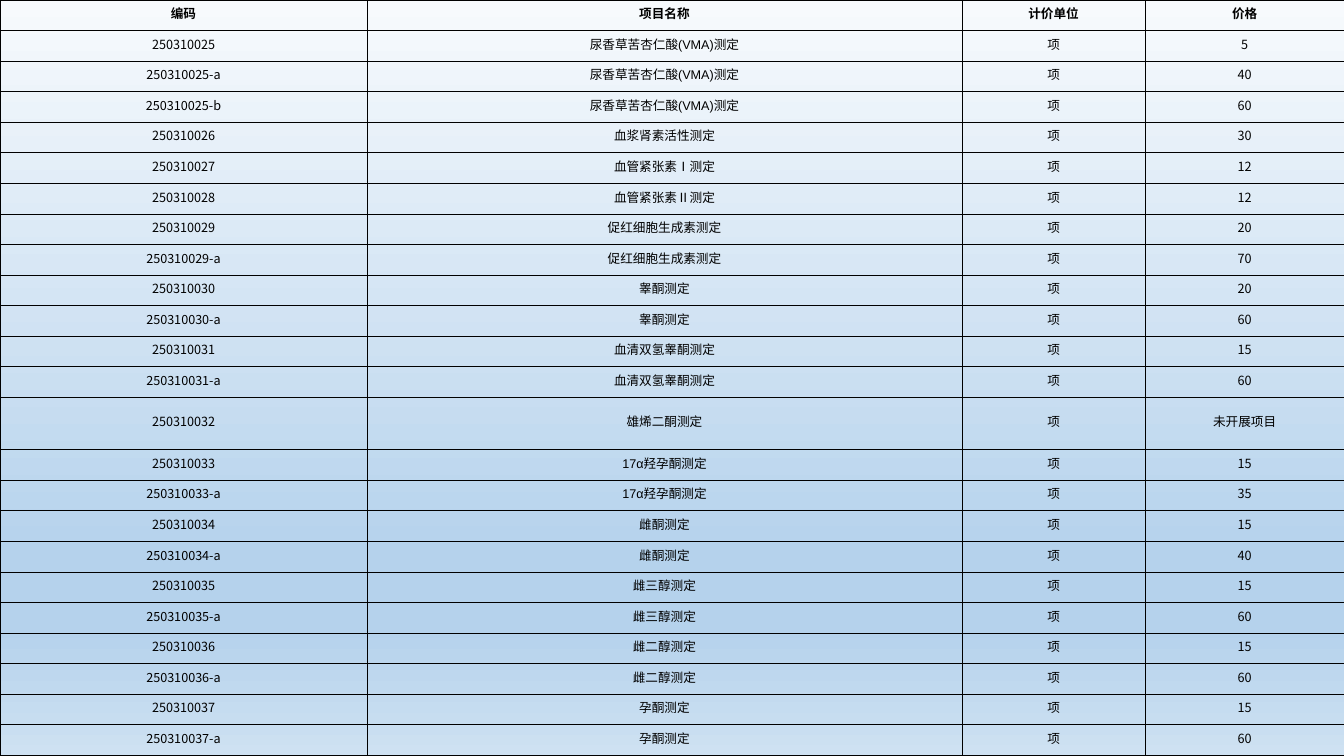
"""Build a price list of hormone tests as one full-slide table."""
from lxml.etree import SubElement
from pptx import Presentation
from pptx.dml.color import RGBColor
from pptx.enum.text import MSO_ANCHOR as Anchor, PP_ALIGN as Align
from pptx.oxml import parse_xml
from pptx.oxml.ns import nsdecls, qn
from pptx.util import Inches, Pt

HEAD = ("编码", "项目名称", "计价单位", "价格")
UNIT = "项"
TESTS = [
    ("250310025", "尿香草苦杏仁酸(VMA)测定", "5"),
    ("250310025-a", "尿香草苦杏仁酸(VMA)测定", "40"),
    ("250310025-b", "尿香草苦杏仁酸(VMA)测定", "60"),
    ("250310026", "血浆肾素活性测定", "30"),
    ("250310027", "血管紧张素Ⅰ测定", "12"),
    ("250310028", "血管紧张素Ⅱ测定", "12"),
    ("250310029", "促红细胞生成素测定", "20"),
    ("250310029-a", "促红细胞生成素测定", "70"),
    ("250310030", "睾酮测定", "20"),
    ("250310030-a", "睾酮测定", "60"),
    ("250310031", "血清双氢睾酮测定", "15"),
    ("250310031-a", "血清双氢睾酮测定", "60"),
    ("250310032", "雄烯二酮测定", "未开展项目"),
    ("250310033", "17α羟孕酮测定", "15"),
    ("250310033-a", "17α羟孕酮测定", "35"),
    ("250310034", "雌酮测定", "15"),
    ("250310034-a", "雌酮测定", "40"),
    ("250310035", "雌三醇测定", "15"),
    ("250310035-a", "雌三醇测定", "60"),
    ("250310036", "雌二醇测定", "15"),
    ("250310036-a", "雌二醇测定", "60"),
    ("250310037", "孕酮测定", "15"),
    ("250310037-a", "孕酮测定", "60"),
]
WIDTHS = (3.64, 5.9, 1.82, 1.97)
WIDE, HIGH, TALL = 13.33, 7.5, 0.52
LATIN, HAN = "Arial", "Noto Sans CJK SC"
BLACK = RGBColor(0x00, 0x00, 0x00)
PALE = RGBColor(0xF7, 0xFA, 0xFD)
BLUE = RGBColor(0xB5, 0xD2, 0xEC)
MIST = RGBColor(0xCE, 0xE1, 0xF2)
STOPS = ((0, PALE), (74, BLUE), (83, BLUE), (100, MIST))


def paint(slide):
    """Fill the background with a downward gradient."""
    slide.background.fill.solid()
    old = slide.element.find(".//" + qn("p:bgPr"))[0]
    stops = "".join(
        f'<a:gs pos="{pos * 1000}"><a:srgbClr val="{tint}"/></a:gs>'
        for pos, tint in STOPS)
    grad = parse_xml(
        f'<a:gradFill {nsdecls("a")} rotWithShape="1"><a:gsLst>{stops}</a:gsLst>'
        '<a:lin ang="5400000" scaled="0"/></a:gradFill>')
    old.getparent().replace(old, grad)


def frame(cell):
    """Draw a thin black line on each side of a cell."""
    props = cell._tc.get_or_add_tcPr()
    for spot, side in enumerate(("lnL", "lnR", "lnT", "lnB")):
        props.insert(spot, parse_xml(
            f'<a:{side} {nsdecls("a")} w="{Pt(0.5)}"><a:solidFill>'
            f'<a:srgbClr val="{BLACK}"/></a:solidFill></a:{side}>'))


def write(cell, text, face, bold):
    """Put centred text in a clear, framed cell."""
    cell.fill.background()
    frame(cell)
    cell.vertical_anchor = Anchor.MIDDLE
    cell.margin_left = cell.margin_right = cell.margin_top = Inches(0.01)
    cell.margin_bottom = Inches(0.05)
    para = cell.text_frame.paragraphs[0]
    para.alignment = Align.CENTER
    run = para.add_run()
    run.text = text
    font = run.font
    font.size, font.bold, font.name = Pt(9), bold, face
    font.color.rgb = BLACK
    SubElement(run._r.get_or_add_rPr(), qn("a:ea"), typeface=HAN)
    order = run._r.get_or_add_rPr()
    order.append(order.find(qn("a:latin")))
    order.append(order.find(qn("a:ea")))


def main():
    """Lay out the table and save the deck."""
    deck = Presentation()
    deck.slide_width, deck.slide_height = Inches(WIDE), Inches(HIGH)
    slide = deck.slides.add_slide(deck.slide_layouts[6])
    paint(slide)
    rows = [HEAD] + [(code, name, UNIT, price) for code, name, price in TESTS]
    table = slide.shapes.add_table(
        len(rows), len(HEAD), 0, 0, Inches(WIDE), Inches(HIGH)).table
    table.first_row = table.horz_banding = False
    for col, width in zip(table.columns, WIDTHS):
        col.width = Inches(width)
    low = (HIGH - TALL) / (len(rows) - 1)
    for r, row in enumerate(rows):
        tall = not row[-1].isdigit() and r > 0
        table.rows[r].height = Inches(TALL if tall else low)
        for c, text in enumerate(row):
            plain = r == 0 or c in (1, 2) or (tall and c == 3)
            write(table.cell(r, c), text, LATIN if plain else HAN, r == 0)
    deck.save("out.pptx")


if __name__ == "__main__":
    main()
